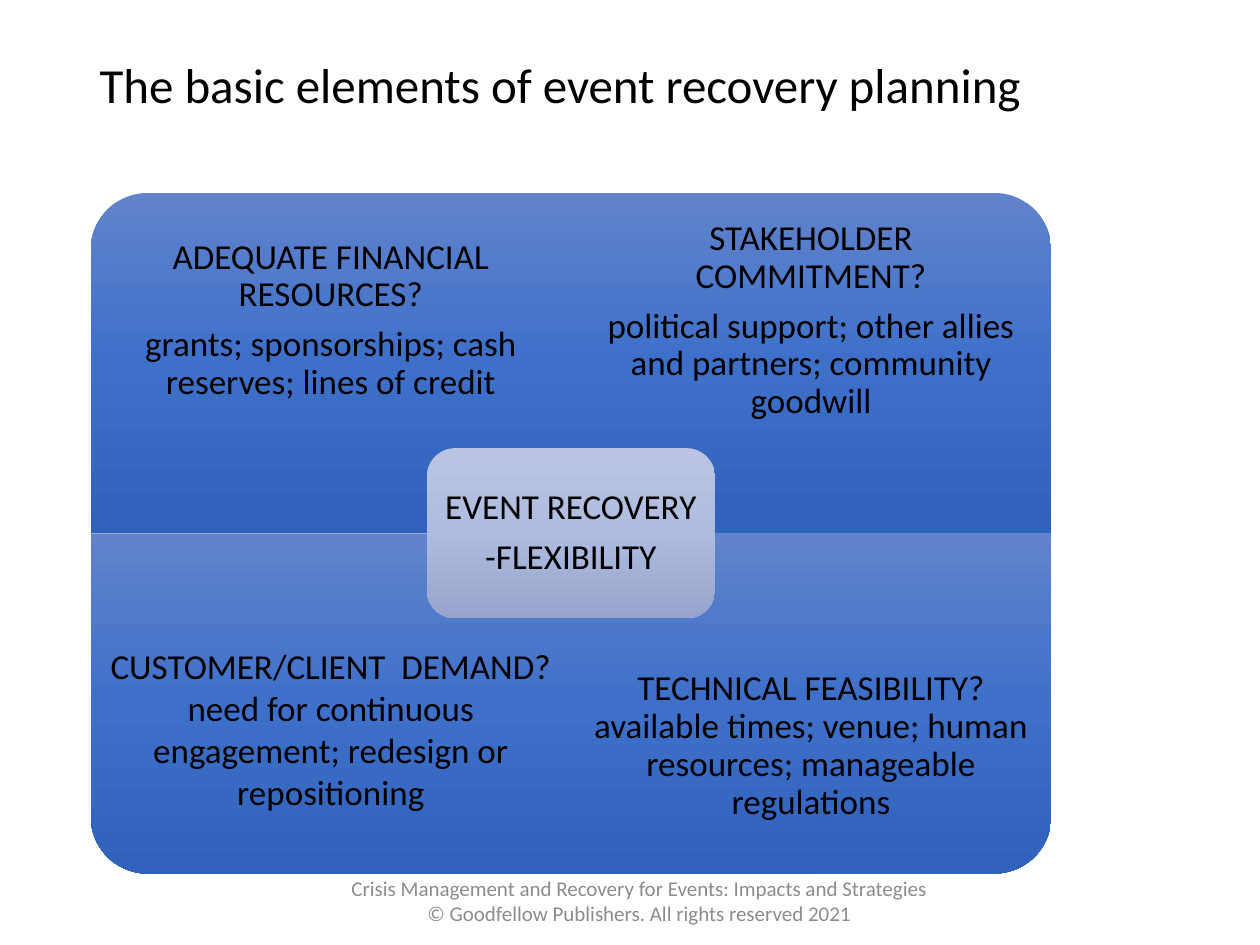
from dataclasses import dataclass

from pptx import Presentation
from pptx.dml.color import RGBColor
from pptx.enum import shapes, text
from pptx.oxml import parse_xml
from pptx.oxml.ns import nsdecls
from pptx.util import Cm, Pt


@dataclass(frozen=True)
class Theme:
    font: str = "Calibri"
    ink: str = "000000"
    muted: str = "8C8C8C"
    tile: tuple = ("6183CB", "3E70CA", "3062BB")
    core: tuple = ("BBC5E3", "AEBBE0", "98A4CB")
    title_size: int = 28
    body_size: int = 20
    footer_size: int = 12


theme = Theme()

prs = Presentation()
prs.slide_width, prs.slide_height = Cm(25.4), Cm(19.05)
slide = prs.slides.add_slide(prs.slide_layouts[6])


def add_panel(preset, left, top, width, height, colours, rotation=0):
    """Add a borderless shape whose gradient always runs down the page."""
    panel = slide.shapes.add_shape(preset, Cm(left), Cm(top), Cm(width), Cm(height))
    panel.rotation = rotation
    panel.shadow.inherit = False
    panel.line.fill.background()
    stops = "".join(
        f'<a:gs pos="{i * 50000}"><a:srgbClr val="{colour}"/></a:gs>'
        for i, colour in enumerate(colours)
    )
    gradient = parse_xml(
        f'<a:gradFill {nsdecls("a")} rotWithShape="0"><a:gsLst>{stops}</a:gsLst>'
        '<a:lin ang="5400000" scaled="0"/></a:gradFill>'
    )
    panel._element.spPr.insert(2, gradient)  # right after xfrm and prstGeom


def add_label(lines, left, top, width, height, size, colour=theme.ink, inset=None,
              bottom_inset=None, tight=False, wrap=True):
    """Add centred text; tight gives the 90 % line pitch with a gap after each paragraph."""
    box = slide.shapes.add_textbox(Cm(left), Cm(top), Cm(width), Cm(height))
    frame = box.text_frame
    frame.word_wrap = wrap
    frame.vertical_anchor = text.MSO_ANCHOR.MIDDLE
    if inset is not None:
        frame.margin_left = frame.margin_right = frame.margin_top = Cm(inset)
        frame.margin_bottom = Cm(bottom_inset or inset)
    frame.text = "\n".join(lines)
    for paragraph in frame.paragraphs:
        paragraph.alignment = text.PP_ALIGN.CENTER
        if tight:
            paragraph.line_spacing = 0.9
            paragraph.space_after = Pt(0.35 * size)
        for run in paragraph.runs:
            run.font.name = theme.font
            run.font.size = Pt(size)
            run.font.color.rgb = RGBColor.from_string(colour)


add_label(
    ["Crisis Management and Recovery for Events: Impacts and Strategies",
     "© Goodfellow Publishers. All rights reserved 2021"],
    1.88, 17.53, 22.02, 1.24, theme.footer_size, theme.muted,
)

# Four tiles around a common centre; each turns its round corner outwards.
matrix_left, matrix_top = 1.83, 3.89
tile_width, tile_height = 9.68, 6.86
label_height = 0.75 * tile_height
tile_inset = 0.4

# column, row, rotation, lines, tight spacing, bottom inset
elements = [
    (0, 0, 270, ["ADEQUATE FINANCIAL RESOURCES?",
                 "grants; sponsorships; cash reserves; lines of credit"], True, tile_inset),
    (1, 0, 0, ["STAKEHOLDER COMMITMENT?",
               "political support; other allies and partners; community goodwill"],
     True, tile_inset),
    (0, 1, 180, ["CUSTOMER/CLIENT  DEMAND?",
                 "need for continuous engagement; redesign or repositioning"], False, 1.1),
    (1, 1, 90, ["TECHNICAL FEASIBILITY? available times; venue; human resources; "
                "manageable regulations"], True, tile_inset),
]
for column, row, rotation, lines, tight, bottom_inset in elements:
    left = matrix_left + column * tile_width
    top = matrix_top + row * tile_height
    # A quarter turn swaps the sides, so the unturned frame is swapped beforehand.
    width, height = tile_width, tile_height
    if rotation % 180:
        width, height = height, width
    add_panel(shapes.MSO_SHAPE.ROUND_1_RECTANGLE,
              left + (tile_width - width) / 2, top + (tile_height - height) / 2,
              width, height, theme.tile, rotation)
    add_label(lines, left, top + row * (tile_height - label_height),
              tile_width, label_height, theme.body_size,
              inset=tile_inset, bottom_inset=bottom_inset, tight=tight)

core_width, core_height = 0.6 * tile_width, tile_height / 2
core_left = matrix_left + tile_width - core_width / 2
core_top = matrix_top + tile_height - core_height / 2
core_pad = 0.17
add_panel(shapes.MSO_SHAPE.ROUNDED_RECTANGLE, core_left, core_top,
          core_width, core_height, theme.core)
add_label(["EVENT RECOVERY", "-FLEXIBILITY"], core_left + core_pad, core_top + core_pad,
          core_width - 2 * core_pad, core_height - 2 * core_pad, theme.body_size,
          inset=0.2, tight=True)

add_label(["The basic elements of event recovery planning"],
          1.65, 0.97, 19.28, 1.45, theme.title_size, wrap=False)

prs.save("out.pptx")
